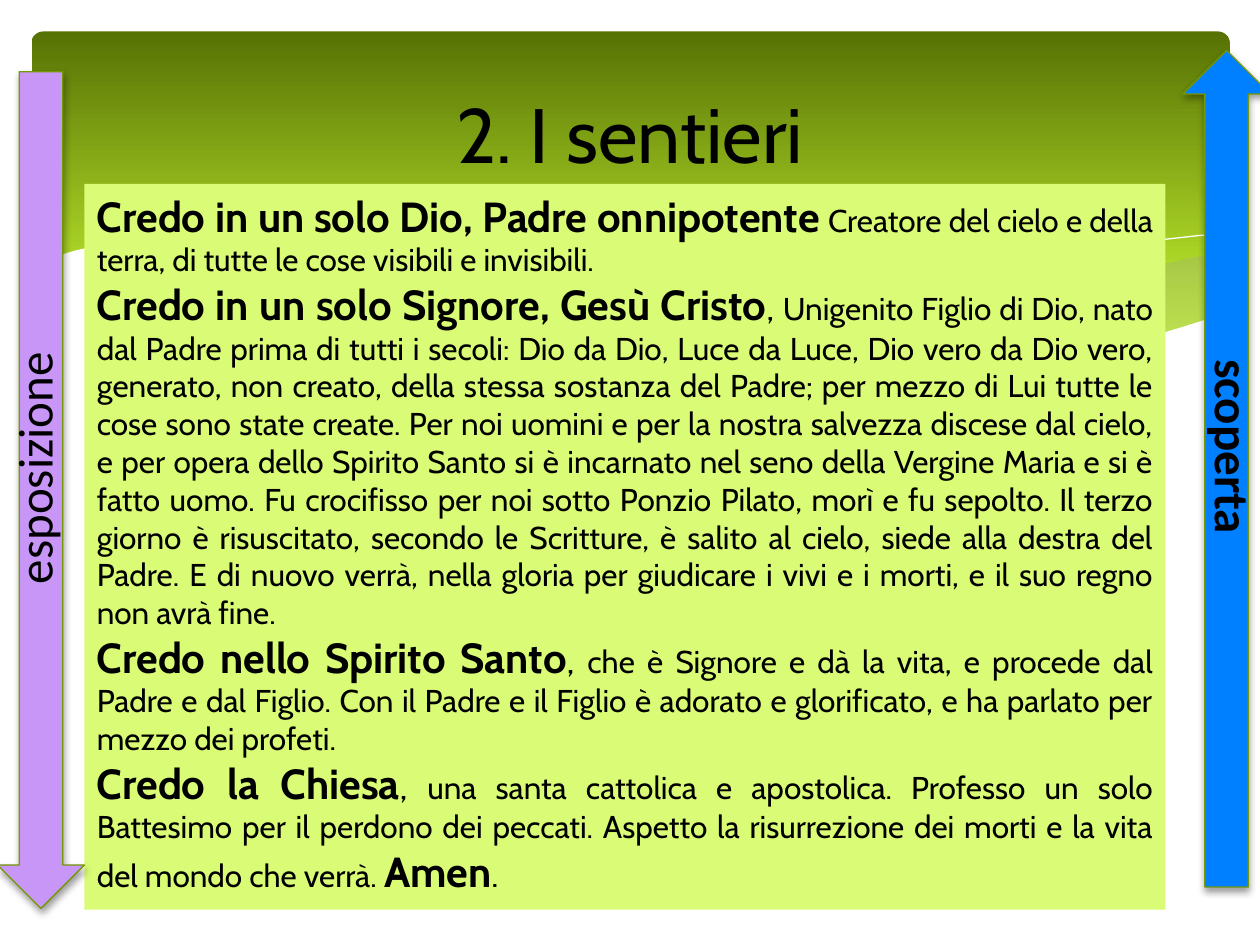
from lxml import etree
from pptx import Presentation
from pptx.dml.color import RGBColor
from pptx.enum.shapes import MSO_SHAPE
from pptx.enum.text import MSO_ANCHOR, PP_ALIGN
from pptx.oxml.ns import qn
from pptx.util import Inches, Pt

ROUNDED = MSO_SHAPE.ROUNDED_RECTANGLE
DOWN_ARROW = MSO_SHAPE.DOWN_ARROW
TOP, MIDDLE = MSO_ANCHOR.TOP, MSO_ANCHOR.MIDDLE
CENTER, JUSTIFY = PP_ALIGN.CENTER, PP_ALIGN.JUSTIFY

BLACK = RGBColor(0x00, 0x00, 0x00)
WHITE = RGBColor(0xFF, 0xFF, 0xFF)
DARK_GREEN = RGBColor(0x57, 0x72, 0x04)
LIME = RGBColor(0xC8, 0xF8, 0x32)
GREY_GREEN = RGBColor(0x9F, 0xA7, 0x95)
PALE_LIME = RGBColor(0xDA, 0xFB, 0x76)
OUTLINE_GREEN = RGBColor(0x74, 0x98, 0x05)
LILAC = RGBColor(0xC8, 0x96, 0xF6)
BLUE = RGBColor(0x00, 0x80, 0xFF)

deck = Presentation()
deck.slide_width, deck.slide_height = Inches(10), Inches(7.5)
page = deck.slides.add_slide(deck.slide_layouts[6])


def add_text(paragraphs, at, font, align=CENTER, anchor=TOP, rotation=0):
    """Each paragraph is a list of (text, size, bold) spans."""
    box = page.shapes.add_textbox(*[Inches(value) for value in at])
    box.rotation = rotation
    frame = box.text_frame
    frame.word_wrap = True
    frame.vertical_anchor = anchor
    for index, spans in enumerate(paragraphs):
        para = frame.add_paragraph() if index else frame.paragraphs[0]
        para.alignment = align
        for text, size, bold in spans:
            span = para.add_run()
            span.text = text
            span.font.name = font
            span.font.size = Pt(size)
            span.font.bold = bold
            span.font.color.rgb = BLACK
    return box


def add_outline(points, closed=True):
    corners = [(Inches(x), Inches(y)) for x, y in points]
    builder = page.shapes.build_freeform(*corners[0])
    builder.add_line_segments(corners[1:], close=closed)
    shape = builder.convert_to_shape()
    shape.shadow.inherit = False
    shape.line.fill.background()
    return shape


# Green gradient banner
banner = page.shapes.add_shape(ROUNDED, Inches(0.25), Inches(0.25), Inches(9.51), Inches(2.7))
banner.adjustments[0] = 0.034
banner.shadow.inherit = False
banner.line.fill.background()
banner.fill.gradient()
banner.fill.gradient_angle = 270
for stop, color, position in zip(banner.fill.gradient_stops, (DARK_GREEN, LIME), (0, 0.9)):
    stop.color.rgb = color
    stop.position = position

# Translucent wave on the right
band = add_outline([
    (9.76, 2), (9.48, 2.04), (9.21, 2.1), (8.91, 2.16), (8.61, 2.23), (8.05, 2.37),
    (7.53, 2.48), (7.06, 2.57), (6.61, 2.65), (6.91, 2.69), (7.19, 2.72), (7.45, 2.75),
    (7.69, 2.77), (8.03, 2.78), (8.35, 2.77), (8.63, 2.75), (8.89, 2.72), (9.13, 2.67),
    (9.35, 2.62), (9.49, 2.57), (9.63, 2.52), (9.76, 2.47)])
band.fill.solid()
band.fill.fore_color.rgb = GREY_GREEN
band_color = band.fill._xPr.find(qn("a:solidFill"))[0]
etree.SubElement(band_color, qn("a:alpha"), val="29000")

# Thin white curve
curve = add_outline([
    (6.13, 2.57), (6.53, 2.46), (6.95, 2.35), (7.48, 2.23), (8.06, 2.1), (8.66, 1.99),
    (8.95, 1.94), (9.24, 1.9), (9.51, 1.87), (9.75, 1.85)], closed=False)
curve.fill.background()
curve.line.color.rgb = WHITE
curve.line.width = Pt(0)

# White wave that cuts off the foot of the banner
wave = add_outline([
    (9.77, 2.46), (9.59, 2.53), (9.4, 2.59), (9.2, 2.65), (8.99, 2.69), (8.75, 2.73),
    (8.5, 2.75), (8.23, 2.77), (7.93, 2.76), (7.61, 2.75), (7.26, 2.72), (6.88, 2.68),
    (6.48, 2.62), (6.03, 2.54), (5.55, 2.45), (5.03, 2.33), (4.47, 2.2), (3.91, 2.07),
    (3.4, 1.97), (2.92, 1.9), (2.5, 1.86), (2.11, 1.84), (1.77, 1.84), (1.46, 1.85),
    (1.19, 1.87), (0.95, 1.91), (0.76, 1.95), (0.59, 1.99), (0.46, 2.03), (0.36, 2.07),
    (0.23, 2.13), (0.23, 3.29), (9.77, 3.29)])
wave.fill.solid()
wave.fill.fore_color.rgb = WHITE

# Title
add_text([[("2. I sentieri", 44, False)]], (0.5, 0.37, 9, 1.37), "Cabin", anchor=MIDDLE)

# Creed
creed = [
    [("Credo in un solo Dio, Padre onnipotente", 24, True), (" ", 20, True),
     ("Creatore del cielo e della terra, di tutte le cose visibili e invisibili.", 18, False)],
    [("Credo in un solo Signore, Gesù Cristo", 24, True), (", ", 20, False),
     ("Unigenito Figlio di Dio, nato dal Padre prima di tutti i secoli: Dio da Dio, "
      "Luce da Luce, Dio vero da Dio vero, generato, non creato, della stessa sostanza "
      "del Padre; per mezzo di Lui tutte le cose sono state create. Per noi uomini e per "
      "la nostra salvezza discese dal cielo, e per opera dello Spirito Santo si è "
      "incarnato nel seno della Vergine Maria e si è fatto uomo. Fu crocifisso per noi "
      "sotto Ponzio Pilato, morì e fu sepolto. Il terzo giorno è risuscitato, secondo le "
      "Scritture, è salito al cielo, siede alla destra del Padre. E di nuovo verrà, nella "
      "gloria per giudicare i vivi e i morti, e il suo regno non avrà fine.", 18, False)],
    [("Credo nello Spirito Santo", 24, True), (", ", 20, False),
     ("che è Signore e dà la vita, e procede dal Padre e dal Figlio. Con il Padre e il "
      "Figlio è adorato e glorificato, e ha parlato per mezzo dei profeti.", 18, False)],
    [("Credo la Chiesa", 24, True), (", ", 20, False),
     ("una santa cattolica e apostolica. Professo un solo Battesimo per il perdono dei "
      "peccati. Aspetto la risurrezione dei morti e la vita del mondo che verrà. ", 18, False),
     ("Amen", 24, True), (".", 20, False)],
]
creed_box = add_text(creed, (0.67, 1.46, 8.58, 5.76), "Cabin", align=JUSTIFY)
creed_box.fill.solid()
creed_box.fill.fore_color.rgb = PALE_LIME

# Side arrows with their turned labels
arrows = [
    ("esposizione", False, LILAC, (-0.02, 0.57), 0, (-2.32, 3.43), 270),
    ("scoperta", True, BLUE, (9.39, 0.4), 180, (7.21, 3.26), 90),
]
for label, bold, color, (left, top), turn, label_at, label_turn in arrows:
    arrow = page.shapes.add_shape(DOWN_ARROW, Inches(left), Inches(top), Inches(0.69), Inches(6.64))
    arrow.rotation = turn
    arrow.fill.solid()
    arrow.fill.fore_color.rgb = color
    arrow.line.color.rgb = OUTLINE_GREEN
    arrow.line.width = Pt(0.75)
    arrow.shadow.inherit = False
    effects = arrow._element.spPr.find(qn("a:effectLst"))
    shadow = etree.SubElement(effects, qn("a:outerShdw"), blurRad=str(Pt(4)), dist=str(Pt(2)),
                              dir="5400000", rotWithShape="0")
    shadow_color = etree.SubElement(shadow, qn("a:srgbClr"), val=str(BLACK))
    etree.SubElement(shadow_color, qn("a:alpha"), val="38000")
    add_text([[(label, 28, bold)]], (*label_at, 5.17, 0.57), "Calibri", rotation=label_turn)

deck.save("out.pptx")
